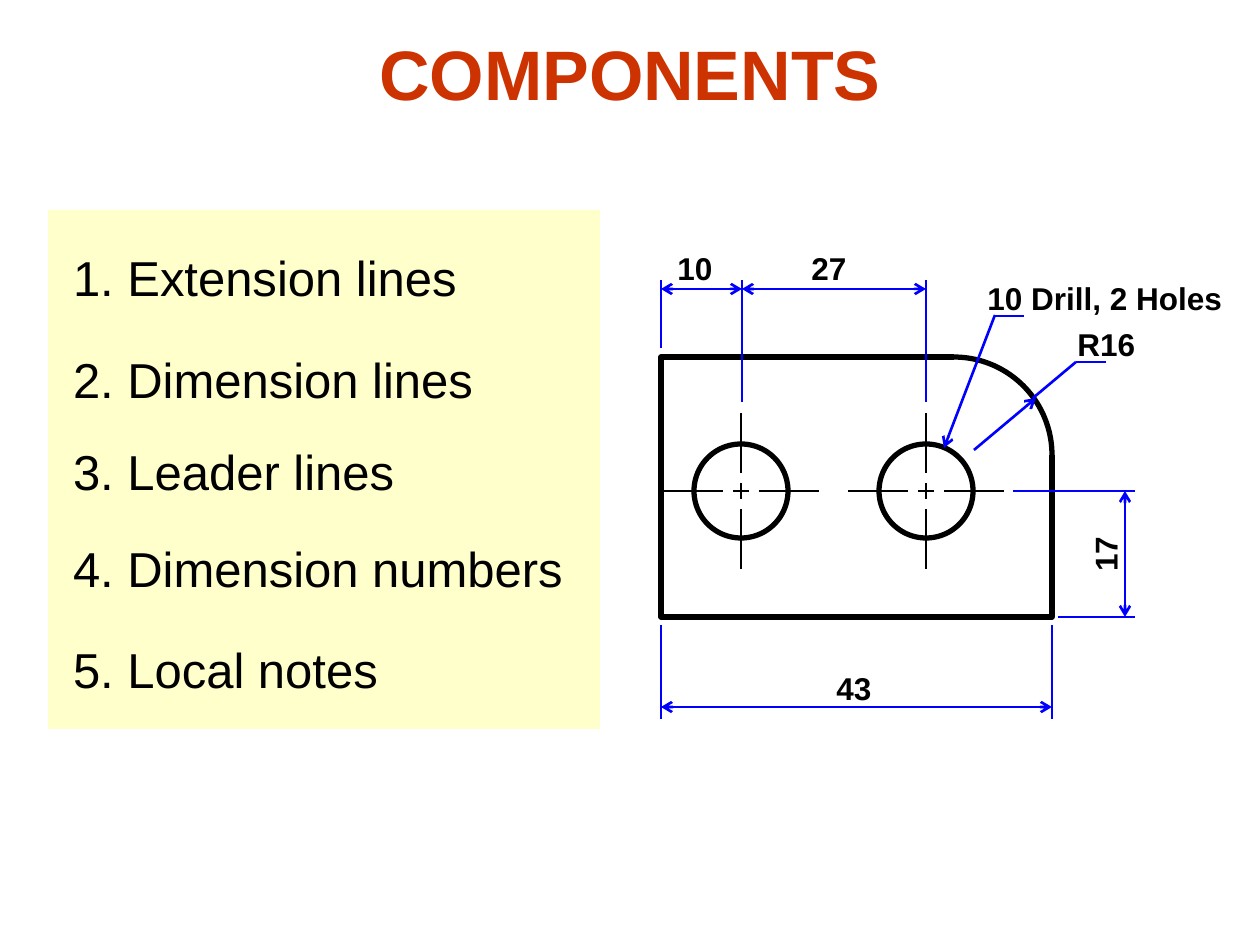
import lxml.etree
import pptx
import pptx.dml.color
import pptx.enum.shapes
import pptx.enum.text
import pptx.oxml.ns
import pptx.util

SCALE = 914400 / 126
COLORS = {"title": "CC3300", "text": "000000", "panel": "FFFFCC", "part": "000000", "dimension": "0000FF"}
SHAPES = pptx.enum.shapes.MSO_SHAPE
ANCHORS = pptx.enum.text.MSO_ANCHOR
FITS = pptx.enum.text.MSO_AUTO_SIZE

HOLE_Y, HOLE_RADIUS = 491, 47
HOLE_CENTRES = [741, 926]
CENTRE_DASHES = [(-78, -18), (-8, 8), (18, 78)]
LEFT, RIGHT, TOP, BOTTOM, CORNER = 661, 1052, 357, 617, 98

COMPONENTS = [
    ("1. Extension lines", 0),
    ("2. Dimension lines", 25),
    ("3. Leader lines", 19),
    ("4. Dimension numbers", 22),
    ("5. Local notes", 24),
]
EXTENSION_LINES = [
    (LEFT, 625, LEFT, 719),
    (RIGHT, 625, RIGHT, 719),
    (LEFT, 348, LEFT, 280),
    (742, 402, 742, 280),
    (926, 402, 926, 280),
    (1013, HOLE_Y, 1135, HOLE_Y),
    (1058, BOTTOM, 1135, BOTTOM),
]
DIMENSION_LINES = [
    (LEFT, 289, 742, 289),
    (742, 289, 926, 289),
    (LEFT, 707, RIGHT, 707),
    (1125, HOLE_Y, 1125, BOTTOM),
]
LEADER_LINES = [
    ((944, 448, 995, 315), ["headEnd"]),
    ((994, 316, 1024, 316), []),
    ((974, 450, 1036, 398), ["tailEnd"]),
    ((1033, 398, 1076, 362), []),
    ((1076, 362, 1106, 362), []),
]
LABELS = [
    ("10", 665, 243, 66, 0),
    ("27", 799, 243, 60, 0),
    ("43", 824, 663, 60, 0),
    ("10 Drill, 2 Holes", 975, 273, 276, 0),
    ("R16", 1065, 319, 83, 0),
    ("17", 1075, 529, 60, 270),
]


def px(length):
    """Turn pixels into EMU."""
    return pptx.util.Emu(round(length * SCALE))


def rgb(name):
    """Look up a named colour."""
    return pptx.dml.color.RGBColor.from_string(COLORS[name])


def apply(target, values):
    """Set every attribute in a dict of format values."""
    for name, value in values.items():
        setattr(target, name, value)


def place(box, left, top, width, height):
    """Position a box given in pixels."""
    apply(box, {"left": px(left), "top": px(top), "width": px(width), "height": px(height)})


def write(para, text, size, color="text", bold=False):
    """Write one formatted span into a paragraph."""
    span = para.add_run()
    span.text = text
    apply(span.font, {"name": "Arial", "size": pptx.util.Pt(size), "bold": bold})
    span.font.color.rgb = rgb(color)


def add_title(page, text):
    """Fill the title placeholder."""
    box = page.shapes.title
    place(box, 0, 24, 1260, 97)
    apply(box.text_frame, {"vertical_anchor": ANCHORS.MIDDLE, "auto_size": FITS.NONE})
    para = box.text_frame.paragraphs[0]
    para.alignment = pptx.enum.text.PP_ALIGN.CENTER
    write(para, text, 40, "title", True)


def add_list(page, items):
    """Fill the body placeholder with the list on its panel."""
    box = page.placeholders[1]
    place(box, 48, 210, 552, 519)
    box.fill.solid()
    box.fill.fore_color.rgb = rgb("panel")
    frame = box.text_frame
    apply(frame, {"margin_left": px(25), "margin_top": px(37), "vertical_anchor": ANCHORS.TOP, "auto_size": FITS.NONE})
    for index, (text, gap) in enumerate(items):
        para = frame.add_paragraph() if index else frame.paragraphs[0]
        para.space_before = pptx.util.Pt(gap)
        write(para, text, 28)
        properties = para._p.get_or_add_pPr()
        properties.set("marL", "0")
        properties.set("indent", "0")
        lxml.etree.SubElement(properties, pptx.oxml.ns.qn("a:buNone"))


def stroke(shape, color, width):
    """Set the colour and width of an outline."""
    shape.line.color.rgb = rgb(color)
    shape.line.width = pptx.util.Pt(width)


def outline(shape):
    """Give a part shape a heavy line without fill or shadow."""
    shape.shadow.inherit = False
    shape.fill.background()
    stroke(shape, "part", 3)


def add_line(page, ends, color="dimension", width=1.5, arrows=()):
    """Draw a straight line with optional arrowheads."""
    line = page.shapes.add_connector(pptx.enum.shapes.MSO_CONNECTOR.STRAIGHT, *map(px, ends))
    stroke(line, color, width)
    for arrow in arrows:
        lxml.etree.SubElement(line.line._get_or_add_ln(), pptx.oxml.ns.qn("a:" + arrow), type="arrow")
    lxml.etree.SubElement(line._element.spPr, pptx.oxml.ns.qn("a:effectLst"))


def add_part(page):
    """Draw the plate outline with its rounded corner."""
    builder = page.shapes.build_freeform(RIGHT, TOP + CORNER, scale=SCALE)
    corners = [(RIGHT, BOTTOM), (LEFT, BOTTOM), (LEFT, TOP), (RIGHT - CORNER, TOP)]
    builder.add_line_segments(corners, close=False)
    outline(builder.convert_to_shape())
    arc_box = (RIGHT - 2 * CORNER, TOP, 2 * CORNER, 2 * CORNER)
    outline(page.shapes.add_shape(SHAPES.ARC, *map(px, arc_box)))


def add_hole(page, x):
    """Draw a hole with its centre lines."""
    hole_box = (x - HOLE_RADIUS, HOLE_Y - HOLE_RADIUS, 2 * HOLE_RADIUS, 2 * HOLE_RADIUS)
    outline(page.shapes.add_shape(SHAPES.OVAL, *map(px, hole_box)))
    for start, end in CENTRE_DASHES:
        add_line(page, (x + start, HOLE_Y, x + end, HOLE_Y), "part", 1)
        add_line(page, (x, HOLE_Y + start, x, HOLE_Y + end), "part", 1)


def add_label(page, text, left, top, width, rotation):
    """Add a dimension number or local note."""
    box = page.shapes.add_textbox(px(left), px(top), px(width), px(50))
    box.rotation = rotation
    apply(box.text_frame, {"word_wrap": False, "auto_size": FITS.SHAPE_TO_FIT_TEXT})
    write(box.text_frame.paragraphs[0], text, 18, bold=True)


def main():
    """Build the slide and save it."""
    deck = pptx.Presentation()
    apply(deck, {"slide_width": px(1260), "slide_height": px(945)})
    page = deck.slides.add_slide(deck.slide_layouts[1])
    add_title(page, "COMPONENTS")
    add_list(page, COMPONENTS)
    add_part(page)
    for x in HOLE_CENTRES:
        add_hole(page, x)
    for ends in EXTENSION_LINES:
        add_line(page, ends)
    for ends in DIMENSION_LINES:
        add_line(page, ends, arrows=["headEnd", "tailEnd"])
    for ends, arrows in LEADER_LINES:
        add_line(page, ends, arrows=arrows)
    for label in LABELS:
        add_label(page, *label)
    deck.save("out.pptx")


if __name__ == "__main__":
    main()
